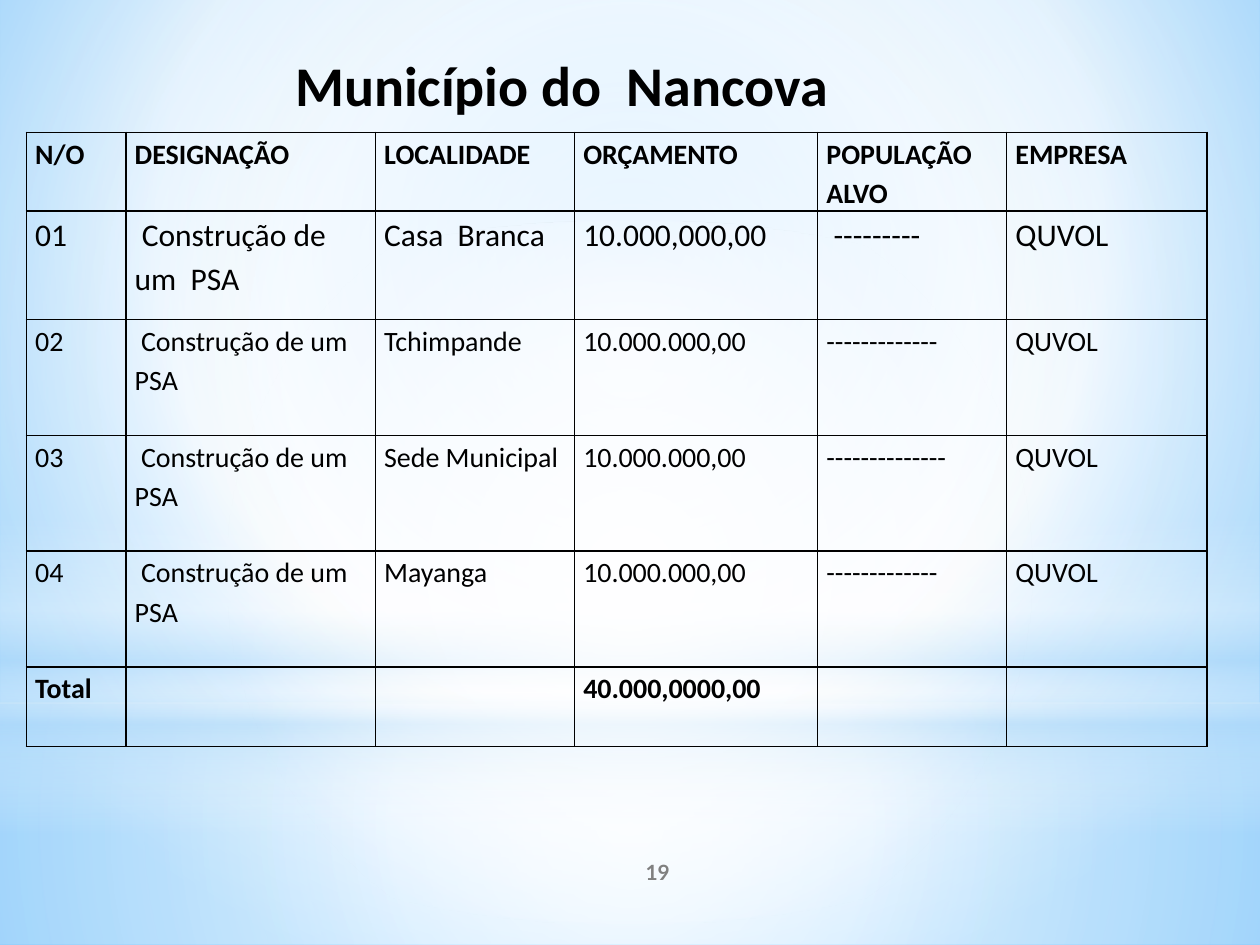
from dataclasses import dataclass
from typing import Any, Optional

from lxml import etree
from pptx import Presentation
from pptx import util as u
from pptx.dml.color import RGBColor
from pptx.enum import shapes, text
from pptx.oxml import ns, parse_xml


@dataclass(frozen=True)
class Gradient:
    """Stops of (position, colour, opacity) with a linear angle or a circular focus."""
    stops: tuple[tuple[int, str, int], ...]
    focus: Optional[tuple[int, int, int, int]] = None
    angle: int = 0


@dataclass(frozen=True)
class Glow:
    """A translucent backdrop shape spanning the slide width."""
    top: float
    height: float
    gradient: Gradient
    kind: Any = shapes.MSO_SHAPE.RECTANGLE


SLIDE_WIDTH, SLIDE_HEIGHT = 10, 7.5
CENTRE = (50, 50, 50, 50)
SKY = Gradient(((0, "9ED5FF", 100), (60, "FFFFFF", 100), (100, "5BB9FF", 100)), (20, 10, 20, 60))
GLOWS = (
    Glow(5.58, 1.92, Gradient(((0, "FFFFFF", 91), (37, "FFFFFF", 76), (100, "B4DCFA", 79)), CENTRE)),
    Glow(0, 5.58, Gradient(((0, "FFFFFF", 89), (48, "FFFFFF", 62), (100, "B4DCFA", 79)), CENTRE)),
    Glow(4.12, 2.5, Gradient(((0, "FFFFFF", 0), (29, "FFFFFF", 30), (45, "B4DCFA", 40),
                              (55, "FFFFFF", 26), (65, "B4DCFA", 60), (100, "FFFFFF", 0)), angle=90)),
    Glow(1.75, 5.58, Gradient(((0, "FFFFFF", 100), (56, "FFFFFF", 0)), CENTRE),
         shapes.MSO_SHAPE.OVAL),
)


@dataclass(frozen=True)
class Row:
    """One table row with its height and text format."""
    cells: tuple[str, ...]
    height: float
    size: int = 16
    bold: bool = False


def project(number: str, place: str, target: str, budget: str = "10.000.000,00",
            height: float = 0.92, size: int = 16) -> Row:
    """Return the row of one construction project."""
    return Row((number, " Construção de um  PSA", place, budget, target, "QUVOL"), height, size)


COLUMN_WIDTHS = (0.79, 1.98, 1.58, 1.93, 1.5, 1.59)
ROWS = (
    Row(("N/O", "DESIGNAÇÃO", "LOCALIDADE", "ORÇAMENTO", "POPULAÇÃO ALVO", "EMPRESA"), 0.61, bold=True),
    project("01", "Casa  Branca", " ---------", "10.000,000,00", 0.86, 18),
    project("02", "Tchimpande", "-------------"),
    project("03", "Sede Municipal", "--------------"),
    project("04", "Mayanga", "-------------"),
    Row(("Total", "", "", "40.000,0000,00", "", ""), 0.63, bold=True),
)


def colour(code: str) -> RGBColor:
    """Turn a hex string into a colour."""
    return RGBColor.from_string(code)


def apply_gradient(fill: Any, properties: Any, gradient: Gradient) -> None:
    """Give the element holding a fill a gradient."""
    fill.solid()
    stops = "".join(
        f'<a:gs pos="{pos * 1000}"><a:srgbClr val="{code}"><a:alpha val="{opacity * 1000}"/></a:srgbClr></a:gs>'
        for pos, code, opacity in gradient.stops)
    if gradient.focus:
        edges = " ".join(f'{side}="{value * 1000}"' for side, value in zip("ltrb", gradient.focus))
        direction = f'<a:path path="circle"><a:fillToRect {edges}/></a:path>'
    else:
        direction = f'<a:lin ang="{gradient.angle * 60000}" scaled="0"/>'
    element = parse_xml(f'<a:gradFill {ns.nsdecls("a")} rotWithShape="1">'
                        f'<a:gsLst>{stops}</a:gsLst>{direction}</a:gradFill>')
    properties.replace(properties.find(ns.qn("a:solidFill")), element)


def add_glow(slide: Any, glow: Glow) -> None:
    """Draw one backdrop shape."""
    shape = slide.shapes.add_shape(glow.kind, 0, u.Inches(glow.top),
                                   u.Inches(SLIDE_WIDTH), u.Inches(glow.height))
    shape.shadow.inherit = False
    shape.line.fill.background()
    apply_gradient(shape.fill, shape.element.spPr, glow.gradient)


def write(frame: Any, words: str, *, size: int, bold: bool = False, font: str = "Calibri",
          code: str = "000000", align: Any = text.PP_ALIGN.LEFT, spacing: float = 1.0) -> None:
    """Write a formatted paragraph into a text frame."""
    frame.word_wrap = True
    paragraph = frame.paragraphs[0]
    paragraph.alignment = align
    paragraph.line_spacing = spacing
    paragraph.font.size = u.Pt(size)
    if words:
        run = paragraph.add_run()
        run.text = words
        run.font.size, run.font.bold, run.font.name = u.Pt(size), bold, font
        run.font.color.rgb = colour(code)


def add_label(slide: Any, words: str, left: float, top: float, width: float, height: float,
              **style: Any) -> None:
    """Add a centred text box."""
    box = slide.shapes.add_textbox(*map(u.Inches, (left, top, width, height)))
    box.text_frame.vertical_anchor = text.MSO_ANCHOR.MIDDLE
    write(box.text_frame, words, bold=True, align=text.PP_ALIGN.CENTER, **style)


def add_borders(cell: Any) -> None:
    """Draw a thin black line on every side of a cell."""
    properties = cell._tc.get_or_add_tcPr()
    for side in "LRTB":
        line = etree.SubElement(properties, ns.qn(f"a:ln{side}"), w=str(u.Pt(1)))
        solid = etree.SubElement(line, ns.qn("a:solidFill"))
        etree.SubElement(solid, ns.qn("a:srgbClr"), val="000000")


def add_projects(slide: Any) -> None:
    """Build the table of municipal projects."""
    height = sum(row.height for row in ROWS)
    table = slide.shapes.add_table(len(ROWS), len(COLUMN_WIDTHS), u.Inches(0.21), u.Inches(1.05),
                                   u.Inches(sum(COLUMN_WIDTHS)), u.Inches(height)).table
    table.first_row = table.horz_banding = False
    for column, width in zip(table.columns, COLUMN_WIDTHS):
        column.width = u.Inches(width)
    for line, row in zip(table.rows, ROWS):
        line.height = u.Inches(row.height)
        for cell, words in zip(line.cells, row.cells):
            add_borders(cell)
            cell.fill.background()
            cell.margin_left = cell.margin_right = u.Inches(0.07)
            cell.margin_top = cell.margin_bottom = 0
            write(cell.text_frame, words, size=row.size, bold=row.bold, spacing=1.15)


def main() -> None:
    """Build and save the slide."""
    deck = Presentation()
    deck.slide_width, deck.slide_height = u.Inches(SLIDE_WIDTH), u.Inches(SLIDE_HEIGHT)
    slide = deck.slides.add_slide(deck.slide_layouts[6])
    sky = slide.background.fill
    sky.solid()
    apply_gradient(sky, slide.element.find(".//" + ns.qn("p:bgPr")), SKY)
    for glow in GLOWS:
        add_glow(slide, glow)
    add_projects(slide)
    add_label(slide, "Município do  Nancova", 0.28, 0.28, 8.36, 0.77, size=32)
    add_label(slide, "19", 4.22, 6.72, 2, 0.4, size=12, font="Lato", code="808080")
    deck.save("out.pptx")


if __name__ == "__main__":
    main()
